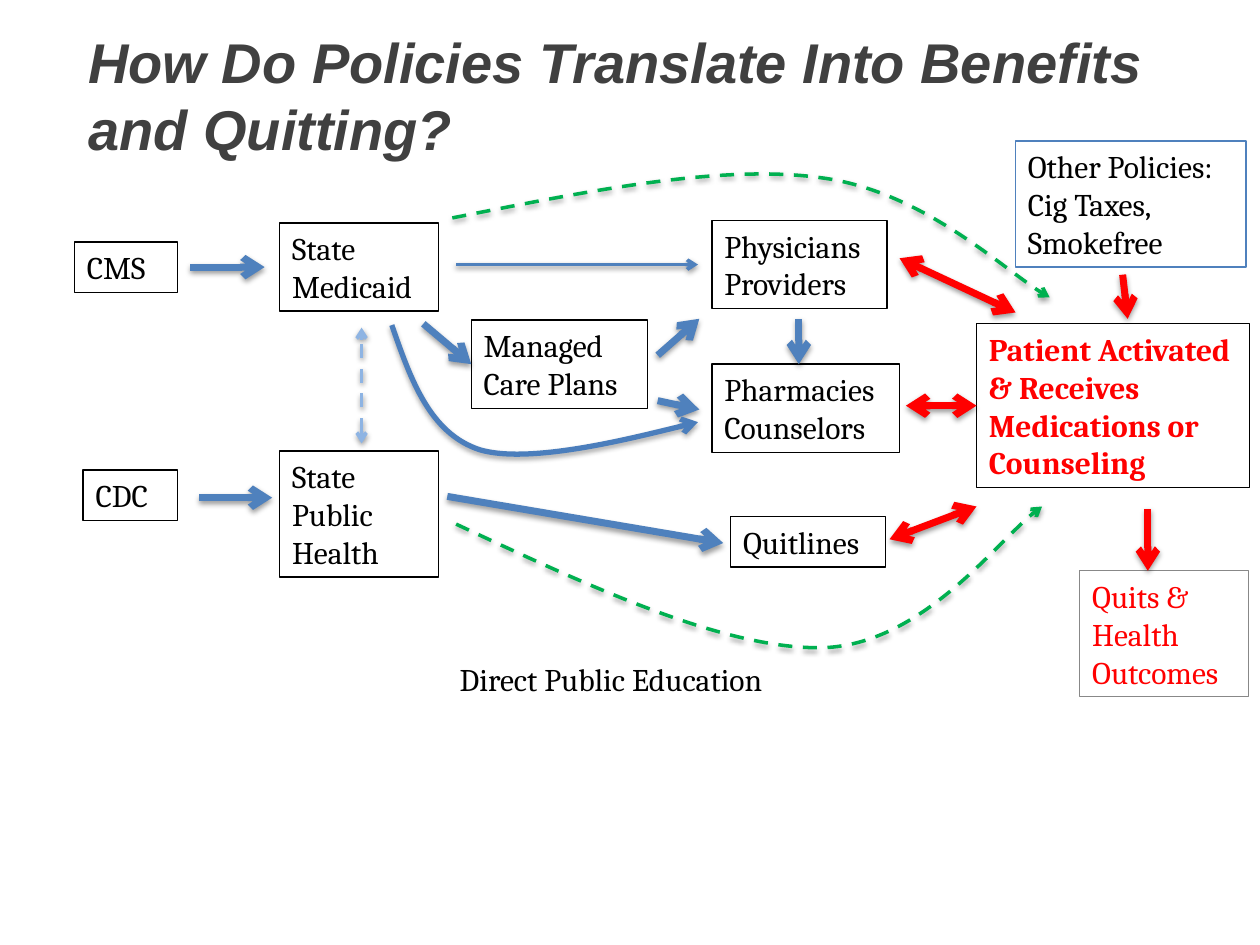
from lxml import etree
from pptx import Presentation
from pptx.dml.color import RGBColor
from pptx.enum.dml import MSO_LINE
from pptx.enum.shapes import MSO_CONNECTOR
from pptx.enum.text import MSO_ANCHOR, MSO_AUTO_SIZE, PP_ALIGN
from pptx.oxml import parse_xml
from pptx.oxml.ns import nsdecls, qn
from pptx.util import Inches, Pt

STRAIGHT = MSO_CONNECTOR.STRAIGHT
DASH = MSO_LINE.DASH
TOP = MSO_ANCHOR.TOP
LEFT = PP_ALIGN.LEFT
NO_AUTOFIT = MSO_AUTO_SIZE.NONE
LEFT_SIDE = 1

COLORS = {
    "title": "404040",
    "black": "000000",
    "red": "FF0000",
    "blue": "4F81BD",
    "curve blue": "4B7EBC",
    "light blue": "8EB4E3",
    "green": "00B050",
    "gray": "888888",
}


def color(name):
    return RGBColor.from_string(COLORS[name])


def style_arrow(shape, line_color, width, dashed, both_ends, shadow_alpha):
    """Set the line, arrowheads and soft shadow of a connector or curve."""
    shape.line.color.rgb = color(line_color)
    shape.line.width = Pt(width)
    if dashed:
        shape.line.dash_style = DASH
    properties = shape._element.spPr
    line = properties.find(qn("a:ln"))
    for end in ("headEnd", "tailEnd") if both_ends else ("tailEnd",):
        etree.SubElement(line, qn(f"a:{end}"), type="arrow")
    properties.append(parse_xml(
        f'<a:effectLst {nsdecls("a")}>'
        f'<a:outerShdw blurRad="{Pt(3.1)}" dist="{Pt(1.6)}" dir="5400000" rotWithShape="0">'
        f'<a:srgbClr val="{COLORS["black"]}"><a:alpha val="{shadow_alpha * 1000}"/></a:srgbClr>'
        '</a:outerShdw></a:effectLst>'))


deck = Presentation()
deck.slide_width = Inches(10)
deck.slide_height = Inches(7.5)
page = deck.slides.add_slide(deck.slide_layouts[5])

# Title
title = page.shapes.title
title.left, title.top = Inches(0.6), Inches(0.17)
title.width, title.height = Inches(9.09), Inches(0.61)
title.text_frame.vertical_anchor = TOP
title.text_frame.auto_size = NO_AUTOFIT
title.text_frame.word_wrap = True
para = title.text_frame.paragraphs[0]
para.alignment = LEFT
span = para.add_run()
span.text = "How Do Policies Translate Into Benefits and Quitting?"
span.font.name = "Arial"
span.font.size = Pt(32)
span.font.bold = span.font.italic = True
span.font.color.rgb = color("title")

# Labels: left, top, width, lines, text color, border color, bold
labels = [
    (0.59, 1.92, 0.82, ["CMS"], "black", "black", False),
    (7.75, 2.57, 2.17, ["Patient Activated", "& Receives", "Medications or", "Counseling"],
     "red", "black", True),
    (2.22, 1.77, 1.26, ["State", "Medicaid"], "black", "black", False),
    (5.65, 2.89, 1.49, ["Pharmacies", "Counselors"], "black", "black", False),
    (2.22, 3.58, 1.26, ["State", "Public", "Health"], "black", "black", False),
    (0.66, 3.73, 0.75, ["CDC"], "black", "black", False),
    (3.74, 2.54, 1.4, ["Managed", "Care Plans"], "black", "black", False),
    (5.65, 1.75, 1.39, ["Physicians", "Providers"], "black", "black", False),
    (5.8, 4.1, 1.23, ["Quitlines"], "black", "black", False),
    (3.55, 5.19, 2.96, ["Direct Public Education"], "black", None, False),
    (8.57, 4.53, 1.34, ["Quits &", "Health", "Outcomes"], "red", "gray", False),
    (8.06, 1.12, 1.83, ["Other Policies:", "Cig Taxes,", "Smokefree"], "black", "blue", False),
]
boxes = {}
for left, top, width, lines, text_color, border, bold in labels:
    height = 0.1 + 0.3 * len(lines)
    box = page.shapes.add_textbox(Inches(left), Inches(top), Inches(width), Inches(height))
    boxes[lines[0]] = box
    if border:
        box.line.color.rgb = color(border)
        box.line.width = Pt(0.75)
    frame = box.text_frame
    frame.word_wrap = True
    for index, line_text in enumerate(lines):
        para = frame.add_paragraph() if index else frame.paragraphs[0]
        span = para.add_run()
        span.text = line_text
        span.font.name = "Cambria"
        span.font.size = Pt(18)
        span.font.bold = bold
        span.font.color.rgb = color(text_color)

# Straight arrows: start, end, color, width, dashed, both ends, box joined at its left side
arrows = [
    ((1.51, 2.12), (2.1, 2.12), "blue", 4, False, False, None),
    ((1.58, 3.95), (2.16, 3.95), "blue", 4, False, False, None),
    ((3.36, 2.57), (3.74, 2.9), "blue", 4, False, False, "Managed"),
    ((3.62, 2.1), (5.54, 2.1), "blue", 2, False, False, None),
    ((6.34, 2.53), (6.34, 2.89), "blue", 4, False, False, None),
    ((7.14, 2.05), (8.06, 2.48), "red", 4, False, True, None),
    ((7.06, 4.28), (7.75, 4.02), "red", 4, False, True, None),
    ((7.19, 3.22), (7.75, 3.23), "red", 4, False, True, "Patient Activated"),
    ((3.55, 3.94), (5.74, 4.31), "blue", 4, False, False, None),
    ((5.22, 3.18), (5.55, 3.25), "blue", 4, False, False, None),
    ((2.87, 3.52), (2.87, 2.6), "light blue", 2, True, True, None),
    ((5.22, 2.82), (5.55, 2.53), "blue", 4, False, False, None),
    ((9.11, 4.04), (9.11, 4.53), "red", 4, False, False, None),
    ((8.91, 2.18), (8.95, 2.53), "red", 4, False, False, None),
]
for start, end, line_color, width, dashed, both_ends, target in arrows:
    arrow = page.shapes.add_connector(STRAIGHT, *map(Inches, start + end))
    if target:
        arrow.end_connect(boxes[target], LEFT_SIDE)
    style_arrow(arrow, line_color, width, dashed, both_ends, 38)

# Curved arrows: start, then (control, control, end) for each Bezier segment
curves = [
    ((3.62, 4.16), [((4.69, 4.66), (5.76, 5.16), (6.54, 5.14)),
                    ((7.31, 5.11), (7.98, 4.21), (8.27, 4.02))], "green", 2, True),
    ((3.59, 1.73), [((4.65, 1.52), (5.72, 1.3), (6.51, 1.41)),
                    ((7.3, 1.51), (8.03, 2.2), (8.33, 2.36))], "green", 2, True),
    ((3.11, 2.58), [((3.26, 3.01), (3.41, 3.44), (3.81, 3.57)),
                    ((4.22, 3.69), (5.54, 3.35), (5.54, 3.35))], "curve blue", 3, False),
]
for start, segments, line_color, width, dashed in curves:
    builder = page.shapes.build_freeform(*map(Inches, start))
    builder.add_line_segments([tuple(map(Inches, segment[-1])) for segment in segments],
                              close=False)
    curve = builder.convert_to_shape()
    curve.fill.background()
    # The builder makes straight segments; turn each into a cubic curve
    for straight, segment in zip(list(curve._element.iter(qn("a:lnTo"))), segments):
        bezier = etree.Element(qn("a:cubicBezTo"))
        for x, y in segment:
            etree.SubElement(bezier, qn("a:pt"), x=str(Inches(x) - curve.left),
                             y=str(Inches(y) - curve.top))
        straight.getparent().replace(straight, bezier)
    style_arrow(curve, line_color, width, dashed, False, 35)

deck.save("out.pptx")
